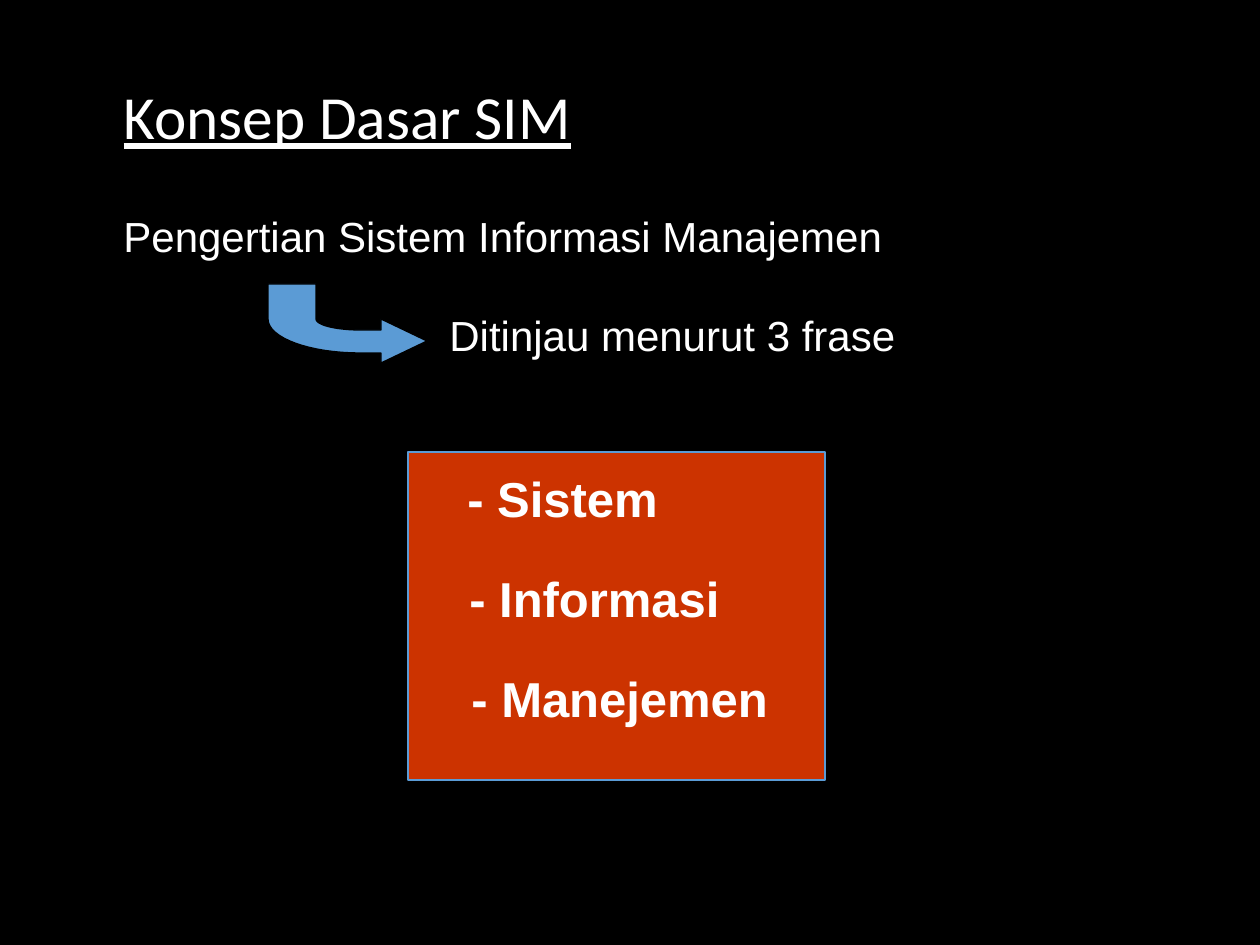
from pptx import Presentation
from pptx.dml.color import RGBColor
from pptx.enum.shapes import MSO_SHAPE as Shape
from pptx.enum.text import MSO_ANCHOR as Anchor, MSO_AUTO_SIZE as AutoSize
from pptx.util import Pt

EMU_PER_PX = 914400 / 126
COLORS = {"background": "000000", "text": "FFFFFF", "panel": "CC3300", "accent": "5B9BD5"}

TITLE = ("Konsep Dasar SIM", (111, 76, 1040, 88))
STATEMENTS = [
    ("Pengertian Sistem Informasi Manajemen", (111, 204, 785, 63)),
    ("Ditinjau menurut 3 frase", (437, 303, 471, 63)),
]
PHRASES = [("- Sistem", 217), ("- Informasi", 276), ("- Manejemen", 323)]
PHRASE_LEFT, PHRASE_TOP, PHRASE_HEIGHT = 455, 462, 72
PHRASE_INDENT, PHRASE_PITCH = 2, 100
PANEL = (408, 452, 417, 328)

TITLE_FONT = {"name": "Calibri", "size": Pt(35), "bold": False, "underline": True}
STATEMENT_FONT = {"name": "Arial", "size": Pt(24)}
PHRASE_FONT = {"name": "Arial", "size": Pt(28), "bold": True}

# A pair is a corner; four pairs are the control points of a cubic curve.
ARROW = [
    (427, 341), (381, 363), (381, 353),
    ((360, 353), (310, 353), (268, 338), (268, 319)),
    (268, 284), (316, 284),
    ((316, 319), (316, 325), (336, 330), (360, 330)),
    (381, 330), (381, 319),
]
CURVE_STEPS = 16


def px(length):
    return round(length * EMU_PER_PX)


def color(part):
    return RGBColor.from_string(COLORS[part])


def place(shape, box):
    for side, length in zip(("left", "top", "width", "height"), box):
        setattr(shape, side, px(length))


def write(frame, text, font_format):
    frame.text = text
    font = frame.paragraphs[0].font
    for key, value in font_format.items():
        setattr(font, key, value)
    font.color.rgb = color("text")


def add_label(slide, text, box, font_format):
    label = slide.shapes.add_textbox(*map(px, box))
    label.text_frame.word_wrap = False
    label.text_frame.auto_size = AutoSize.SHAPE_TO_FIT_TEXT
    write(label.text_frame, text, font_format)


def paint(shape, fill, line):
    shape.shadow.inherit = False
    shape.fill.solid()
    shape.fill.fore_color.rgb = color(fill)
    shape.line.color.rgb = color(line)
    shape.line.width = Pt(0.75)


def bezier(controls):
    for step in range(CURVE_STEPS + 1):
        t = step / CURVE_STEPS
        weights = ((1 - t) ** 3, 3 * t * (1 - t) ** 2, 3 * t * t * (1 - t), t ** 3)
        yield tuple(sum(w * c for w, c in zip(weights, axis)) for axis in zip(*controls))


def add_arrow(slide):
    outline = []
    for part in ARROW:
        outline.extend(bezier(part) if len(part) == 4 else [part])
    points = [(px(x), px(y)) for x, y in outline]
    builder = slide.shapes.build_freeform(*points[0])
    builder.add_line_segments(points[1:], close=True)
    paint(builder.convert_to_shape(), "accent", "background")


def main():
    deck = Presentation()
    deck.slide_width, deck.slide_height = px(1260), px(945)
    slide = deck.slides.add_slide(deck.slide_layouts[5])
    slide.background.fill.solid()
    slide.background.fill.fore_color.rgb = color("background")

    panel = slide.shapes.add_shape(Shape.RECTANGLE, *map(px, PANEL))
    paint(panel, "panel", "accent")

    title_text, title_box = TITLE
    title = slide.shapes.title
    place(title, title_box)
    title.text_frame.vertical_anchor = Anchor.MIDDLE
    write(title.text_frame, title_text, TITLE_FONT)
    heading = title.text_frame.paragraphs[0]
    heading.alignment = 1  # left
    heading.line_spacing = 0.9

    for text, box in STATEMENTS:
        add_label(slide, text, box, STATEMENT_FONT)
    for row, (text, width) in enumerate(PHRASES):
        box = (PHRASE_LEFT + row * PHRASE_INDENT, PHRASE_TOP + row * PHRASE_PITCH,
               width, PHRASE_HEIGHT)
        add_label(slide, text, box, PHRASE_FONT)
    add_arrow(slide)
    deck.save("out.pptx")


if __name__ == "__main__":
    main()
